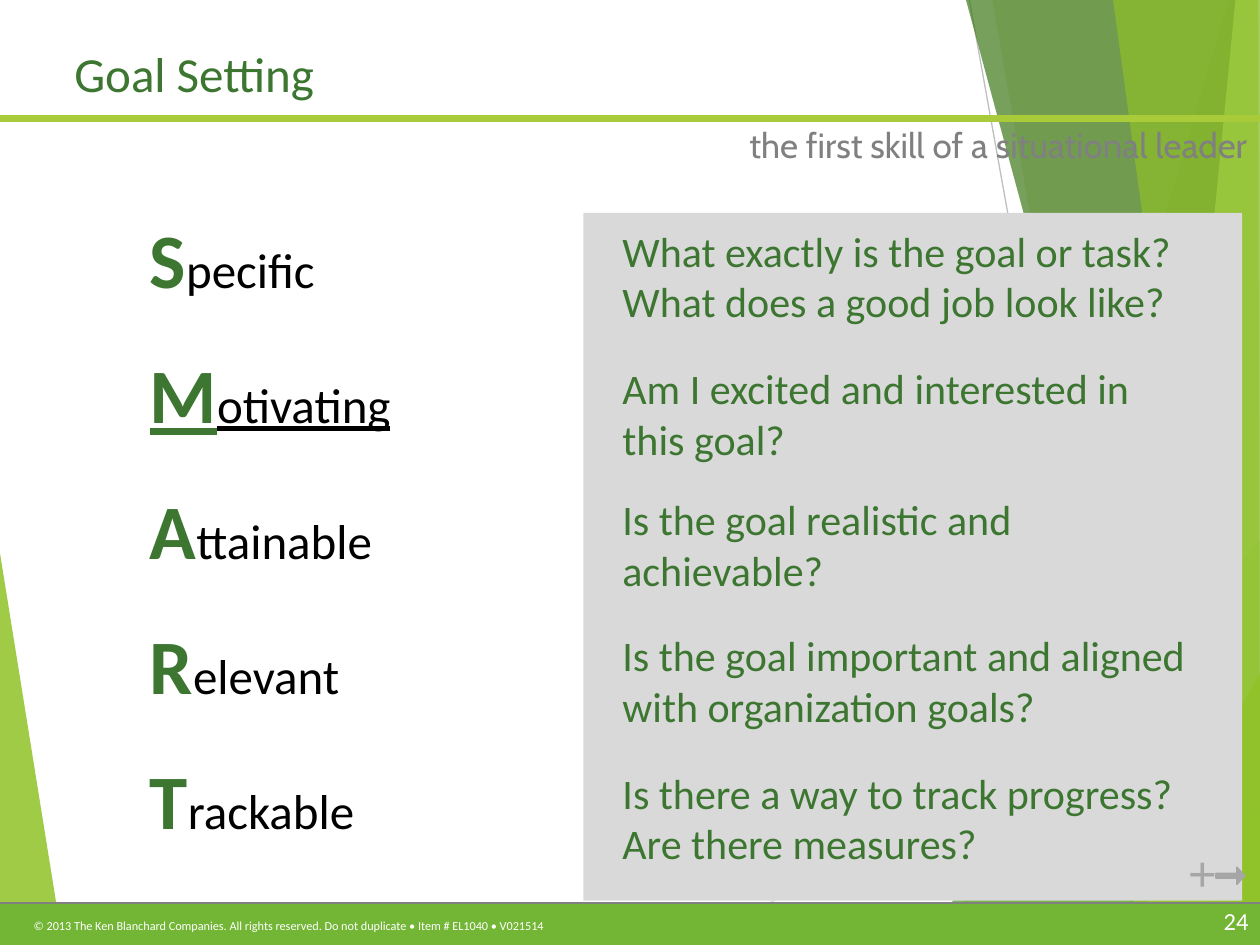
"""Build the SMART goal-setting slide."""
import pptx
import pptx.dml.color
import pptx.enum.shapes
import pptx.enum.text
import pptx.oxml
import pptx.oxml.ns
import pptx.util

Pt = pptx.util.Pt
SHAPE = pptx.enum.shapes.MSO_SHAPE
ALIGN = pptx.enum.text.PP_ALIGN
WIDTH, HEIGHT = 720, 540
GREEN, GRAY, SILVER, WHITE = "3C7630", "808080", "A6A6A6", "FFFFFF"

TITLE = "Goal Setting"
SUBTITLE = "the first skill of a situational leader"
COPYRIGHT = ("© 2013 The Ken Blanchard Companies. All rights reserved. "
             "Do not duplicate • Item # EL1040 • V021514")
GOALS = [
    ("Specific", "What exactly is the goal or task? What does a good job look like?", 125.3, 386.6),
    ("Motivating", "Am I excited and interested in this goal?", 203.8, 370.8),
    ("Attainable", "Is the goal realistic and achievable?", 278.6, 309.6),
    ("Relevant", "Is the goal important and aligned with organization goals?", 356.4, 384.5),
    ("Trackable", "Is there a way to track progress? Are there measures?", 434.9, 385.2),
]
UNDERLINED = "Motivating"
WORD_TOP, WORD_PITCH = 123.1, 77.4

LEFT_FACET = ("90C226", 85, [(0, 316), (36, 540), (0, 540)])
RIGHT_FACETS = [
    ("90C226", 30, [(702, 0), (543, 540), (720, 540), (720, 0)]),
    ("90C226", 20, [(567, 0), (662, 540), (720, 540), (720, 0)]),
    ("54A021", 72, [(523, 540), (720, 309), (720, 540)]),
    ("3F7819", 70, [(552, 0), (698, 540), (720, 540), (720, 0)]),
    ("C0E474", 70, [(706, 0), (653, 540), (720, 540), (720, 0)]),
    ("90C226", 65, [(636, 0), (710, 540), (720, 540), (719, 0)]),
    ("90C226", 80, [(634, 540), (720, 385), (720, 540)]),
]
FACET_LINES = [((404, 540), (720, 329), "D9D9D9"), ((554, 0), (651, 540), "BFBFBF")]


def rgb(color):
    """Return the colour of a hex string."""
    return pptx.dml.color.RGBColor.from_string(color)


def paint(sp, color, line=None):
    """Fill a shape and set or remove its outline."""
    sp.shadow.inherit = False
    sp.fill.solid()
    sp.fill.fore_color.rgb = rgb(color)
    if line:
        sp.line.color.rgb, sp.line.width = rgb(line), Pt(0.75)
    else:
        sp.line.fill.background()


def add_facet(s, color, alpha, points):
    """Draw a translucent polygon."""
    builder = s.shapes.build_freeform(*map(Pt, points[0]))
    builder.add_line_segments([(Pt(x), Pt(y)) for x, y in points[1:]])
    sp = builder.convert_to_shape()
    paint(sp, color)
    fill = sp._element.spPr.find(pptx.oxml.ns.qn("a:solidFill"))
    fill[0].append(pptx.oxml.parse_xml(
        f'<a:alpha {pptx.oxml.ns.nsdecls("a")} val="{alpha * 1000}"/>'))


def add_line(s, start, end, color, width):
    """Draw a straight line without a shadow."""
    sp = s.shapes.add_connector(
        pptx.enum.shapes.MSO_CONNECTOR.STRAIGHT, *map(Pt, start + end))
    sp.line.color.rgb, sp.line.width = rgb(color), Pt(width)
    sp._element.spPr.append(pptx.oxml.parse_xml(
        f'<a:effectLst {pptx.oxml.ns.nsdecls("a")}/>'))


def add_shape(s, kind, box, color, line=None):
    """Draw a filled preset shape."""
    sp = s.shapes.add_shape(kind, *map(Pt, box))
    paint(sp, color, line)
    return sp


def write(sp, box, runs, inset=7.2, **paragraph):
    """Place a text shape and write one paragraph of (text, colour, font format) runs."""
    sp.left, sp.top, sp.width, sp.height = map(Pt, box)
    tf = sp.text_frame
    frame = {"word_wrap": True, "auto_size": pptx.enum.text.MSO_AUTO_SIZE.NONE,
             "vertical_anchor": pptx.enum.text.MSO_ANCHOR.TOP, "margin_left": Pt(inset)}
    for name, value in frame.items():
        setattr(tf, name, value)
    p = tf.paragraphs[0]
    for name, value in ({"alignment": ALIGN.LEFT, "space_before": Pt(0)} | paragraph).items():
        setattr(p, name, value)
    for text, color, size, extra in runs:
        r = p.add_run()
        r.text = text
        r.font.color.rgb = rgb(color)
        for name, value in ({"name": "Calibri", "size": Pt(size)} | extra).items():
            setattr(r.font, name, value)


def add_text(s, box, runs, **options):
    """Add a text box."""
    write(s.shapes.add_textbox(*map(Pt, box)), box, runs, **options)


def add_background(s):
    """Draw the facets and the footer."""
    add_facet(s, *LEFT_FACET)
    for start, end, color in FACET_LINES:
        add_line(s, start, end, color, 0.75)
    for facet in RIGHT_FACETS:
        add_facet(s, *facet)
    add_shape(s, SHAPE.RECTANGLE, (0, 516, WIDTH, 24), "73B535")
    add_text(s, (12.2, 521.3, 542, 18), [(COPYRIGHT, WHITE, 7, {})])
    add_line(s, (0, 516), (WIDTH, 516), GRAY, 1.5)
    add_text(s, (669.6, 514, 51, 24.5), [("24", WHITE, 14, {})], alignment=ALIGN.RIGHT)


def add_heading(s):
    """Fill the placeholders and bring them in front of the background."""
    title, body = s.placeholders
    add_line(s, (0, 67.7), (WIDTH, 67.7), "AACB39", 4.5)
    for sp in (title, body):
        s.shapes._spTree.append(sp._element)
    write(title, (35.3, 25.2, 648, 46), [(TITLE, GREEN, 28, {})], line_spacing=0.9)
    pPr = body.text_frame.paragraphs[0]._p.get_or_add_pPr()
    pPr.set("marL", "0")
    pPr.set("indent", "0")
    pPr.append(pptx.oxml.parse_xml(f'<a:buNone {pptx.oxml.ns.nsdecls("a")}/>'))
    write(body, (63.4, 67, 656.6, 43), [(SUBTITLE, GRAY, 20, {"name": "Cabin"})],
          alignment=ALIGN.RIGHT)


def add_goals(s):
    """Write each goal word beside its question."""
    for i, (word, question, top, width) in enumerate(GOALS):
        underline = {"underline": True} if word == UNDERLINED else {}
        add_text(s, (312.5, top, width, 65.5), [(question, GREEN, 24, {})], inset=43.2)
        add_text(s, (78.5, WORD_TOP + i * WORD_PITCH, 299.5, 56),
                 [(word[0], GREEN, 44, {"bold": True} | underline),
                  (word[1:], "000000", 28, underline)], line_spacing=0.9)


def main():
    """Create and save the presentation."""
    prs = pptx.Presentation()
    prs.slide_width, prs.slide_height = Pt(WIDTH), Pt(HEIGHT)
    s = prs.slides.add_slide(prs.slide_layouts[1])
    add_background(s)
    add_shape(s, SHAPE.RECTANGLE, (333.4, 121.7, 376.4, 393), "D9D9D9")
    add_heading(s)
    add_goals(s)
    add_text(s, (671.8, 478, 28.8, 41), [("+", SILVER, 28, {"name": "Arial"})])
    arrow = add_shape(s, SHAPE.RIGHT_ARROW, (694.8, 495.4, 16.6, 10), SILVER, SILVER)
    arrow.adjustments[0], arrow.adjustments[1] = 0.28, 0.46
    prs.save("out.pptx")


if __name__ == "__main__":
    main()
